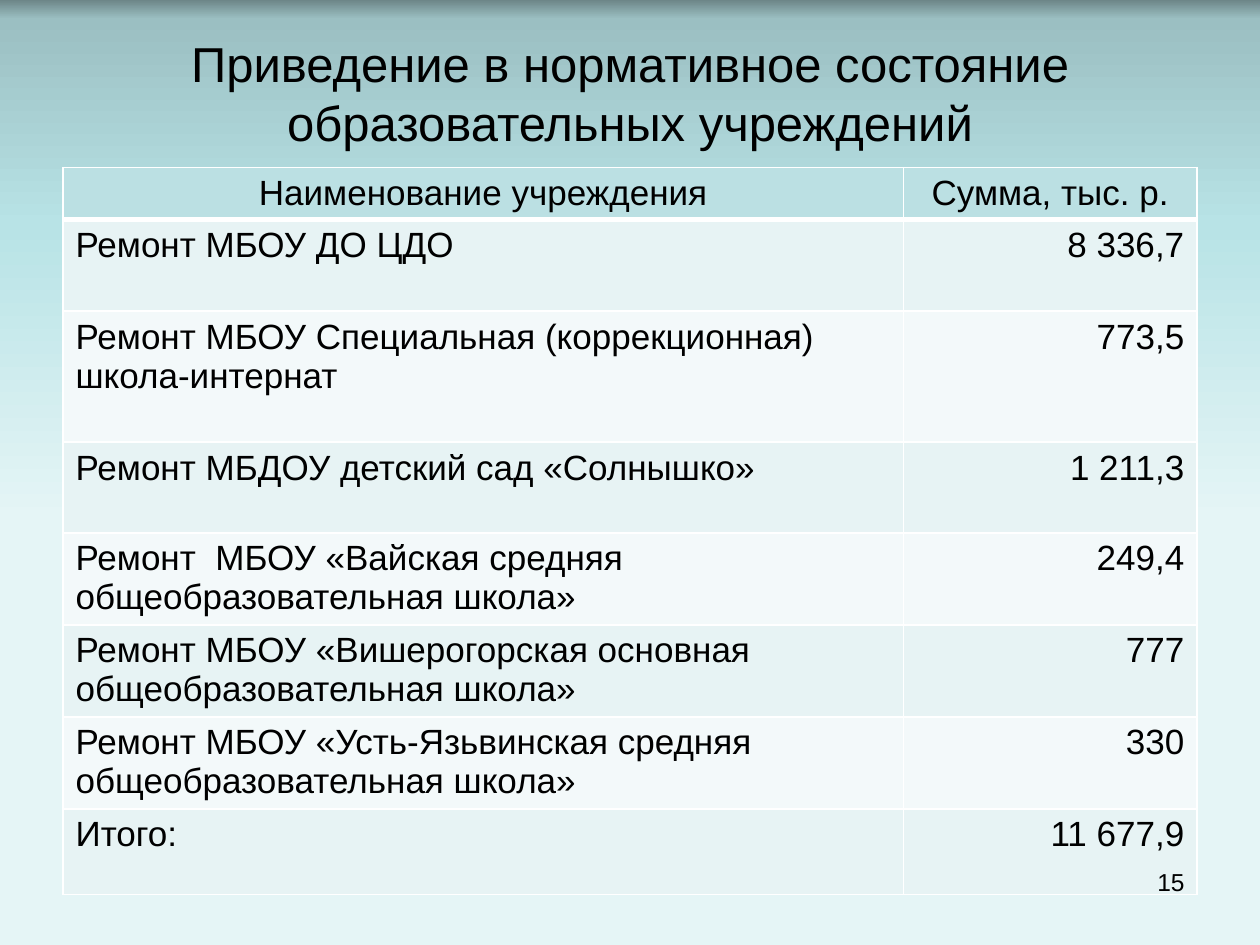
from lxml import etree
from pptx import Presentation
from pptx.dml.color import RGBColor
from pptx.enum.text import MSO_ANCHOR, PP_ALIGN
from pptx.oxml.ns import qn
from pptx.util import Inches, Pt

LEFT, MID, RIGHT = PP_ALIGN.LEFT, PP_ALIGN.CENTER, PP_ALIGN.RIGHT

# Content
TITLE = "Приведение в нормативное состояние образовательных учреждений"
ROWS = [
    ("Наименование учреждения", "Сумма, тыс. р."),
    ("Ремонт МБОУ ДО ЦДО", "8 336,7"),
    ("Ремонт МБОУ Специальная (коррекционная) школа-интернат", "773,5"),
    ("Ремонт МБДОУ детский сад «Солнышко»", "1 211,3"),
    ("Ремонт  МБОУ «Вайская средняя общеобразовательная школа»", "249,4"),
    ("Ремонт МБОУ «Вишерогорская основная общеобразовательная школа»", "777"),
    ("Ремонт МБОУ «Усть-Язьвинская средняя общеобразовательная школа»", "330"),
    ("Итого:", "11 677,9"),
]
PAGE = "15"

# Style
FONT = "Arial"
COLORS = {"text": "000000", "head": "BBE0E3", "odd": "E7F3F4",
          "even": "F3F9FA", "rule": "FFFFFF"}
STOPS = [(0, "6D8688"), (2, "9BBFC2"), (24, "B8E3E6"), (55, "E5F5F6")]

# Layout in inches
WIDE, HIGH, EDGE = 10, 7.5, 0.5
SPAN = WIDE - 2 * EDGE
COLS = [6.67, 2.33]
TALL = [0.41, 0.73, 1.04, 0.72, 0.73, 0.73, 0.73, 0.68]


def write(frame, text, size, align):
    frame.word_wrap = True
    para = frame.paragraphs[0]
    para.alignment = align
    run = para.add_run()
    run.text = text
    run.font.size = Pt(size)
    run.font.name = FONT
    run.font.color.rgb = RGBColor.from_string(COLORS["text"])


def add_color(parent, color):
    etree.SubElement(parent, qn("a:srgbClr"), val=color)


def add_rules(cell, top, bottom):
    props = cell._tc.get_or_add_tcPr()
    sides = [("L", 1), ("R", 1), ("T", top), ("B", bottom)]
    for i, (side, width) in enumerate(sides):
        line = etree.Element(qn("a:ln" + side), w=str(Pt(width)))
        add_color(etree.SubElement(line, qn("a:solidFill")), COLORS["rule"])
        props.insert(i, line)


deck = Presentation()
deck.slide_width, deck.slide_height = Inches(WIDE), Inches(HIGH)
slide = deck.slides.add_slide(deck.slide_layouts[5])

# Background gradient, top to bottom
fill = slide.background.fill
fill.gradient()
fill.gradient_angle = 270
stops = slide.element.find(".//" + qn("a:gsLst"))
for old in list(stops):
    stops.remove(old)
for share, color in STOPS:
    add_color(etree.SubElement(stops, qn("a:gs"), pos=str(share * 1000)), color)

# Title
title = slide.shapes.title
title.left, title.top = Inches(EDGE), Inches(0.3)
title.width, title.height = Inches(SPAN), Inches(0.87)
title.text_frame.vertical_anchor = MSO_ANCHOR.MIDDLE
write(title.text_frame, TITLE, 28, MID)

# Table
table = slide.shapes.add_table(
    len(ROWS), len(COLS), Inches(EDGE), Inches(1.33),
    Inches(SPAN), Inches(sum(TALL))).table
for col, width in zip(table.columns, COLS):
    col.width = Inches(width)
for r, row in enumerate(ROWS):
    table.rows[r].height = Inches(TALL[r])
    shade = "head" if r == 0 else "odd" if r % 2 else "even"
    for c, text in enumerate(row):
        cell = table.cell(r, c)
        cell.fill.solid()
        cell.fill.fore_color.rgb = RGBColor.from_string(COLORS[shade])
        add_rules(cell, 3 if r == 1 else 1, 3 if r == 0 else 1)
        write(cell.text_frame, text, 20, MID if r == 0 else (LEFT, RIGHT)[c])

# Page number
box = slide.shapes.add_textbox(
    Inches(WIDE - EDGE - COLS[1]), Inches(6.83), Inches(COLS[1]), Inches(0.52))
write(box.text_frame, PAGE, 14, RIGHT)

deck.save("out.pptx")
